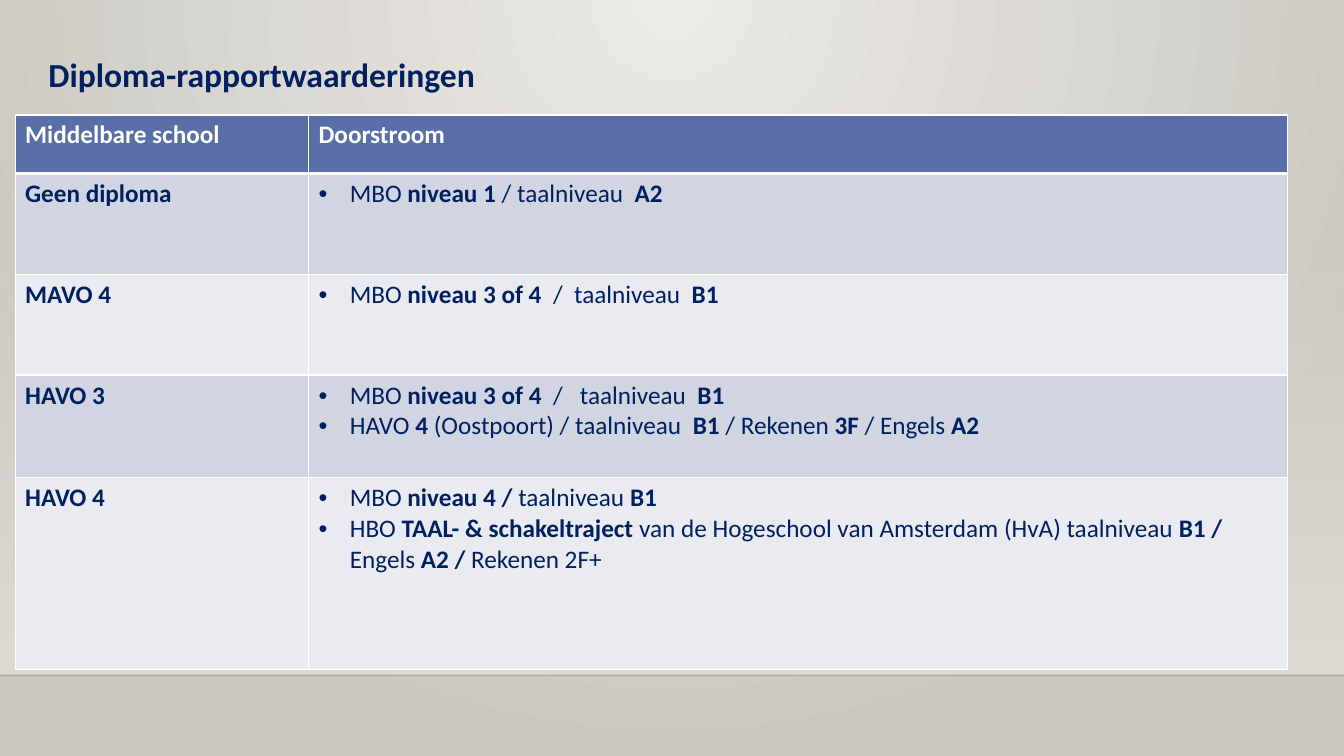
import pptx
import pptx.util
import pptx.dml.color
import pptx.enum.shapes
import pptx.enum.text
import pptx.oxml
import pptx.oxml.ns

THEME = {
    "font": "Calibri", "title_size": 24, "text_size": 18,
    "navy": "002060", "white": "FFFFFF", "line": "000001",
    "header": "586EA6", "bands": ("D1D5E1", "EAEBF1"),
    "glow": "ECEAE7", "edge": "CAC7C1", "wall": "DFDBD5",
}
NS = pptx.oxml.ns.nsdecls("a")
W, H = 13.33, 7.5
FLOOR = 6.7
COLS = (2.91, 9.71)
ROWS = (0.58, 1.0, 1.0, 1.02, 1.9)
INDENT = pptx.util.Inches(0.31)

# Text between ** marks is bold
CONTENT = [
    ("Middelbare school", ["**Doorstroom**"]),
    ("Geen diploma", ["MBO **niveau 1 **/ taalniveau  **A2**"]),
    ("MAVO 4", ["MBO **niveau 3 of 4**  /  taalniveau  **B1**"]),
    ("HAVO 3", ["MBO** niveau 3 of 4  **/   taalniveau  **B1**",
                "HAVO** 4 **(Oostpoort) / taalniveau  **B1** / Rekenen** 3F **/ Engels** A2**"]),
    ("HAVO 4", ["MBO** niveau 4 / **taalniveau** B1**",
                "HBO **TAAL- & schakeltraject **van de Hogeschool van Amsterdam (HvA) "
                "taalniveau **B1 / **Engels** A2 / **Rekenen 2F+"]),
]


def gradient(start, end, direction, start_alpha=100):
    return pptx.oxml.parse_xml(
        f'<a:gradFill {NS} rotWithShape="1"><a:gsLst><a:gs pos="0"><a:srgbClr val="{start}">'
        f'<a:alpha val="{start_alpha * 1000}"/></a:srgbClr></a:gs>'
        f'<a:gs pos="100000"><a:srgbClr val="{end}"/></a:gs></a:gsLst>{direction}</a:gradFill>')


def add_runs(p, text, size, color):
    for i, part in enumerate(text.split("**")):
        if part:
            r = p.add_run()
            r.text = part
            formats = {"name": THEME["font"], "size": pptx.util.Pt(size), "bold": i % 2 == 1}
            for name, value in formats.items():
                setattr(r.font, name, value)
            r.font.color.rgb = pptx.dml.color.RGBColor.from_string(color)


prs = pptx.Presentation()
prs.slide_width, prs.slide_height = pptx.util.Inches(W), pptx.util.Inches(H)
s = prs.slides.add_slide(prs.slide_layouts[5])

# Background glow from the top centre
s.background.fill.solid()
solid = s.background.fill._xPr.find(pptx.oxml.ns.qn("a:solidFill"))
solid.getparent().replace(solid, gradient(
    THEME["glow"], THEME["edge"],
    '<a:path path="circle"><a:fillToRect l="43000" t="0" r="43000" b="100000"/></a:path>'))

# Wall that fades in towards the floor line
title = s.shapes.title
wall = s.shapes.add_shape(
    pptx.enum.shapes.MSO_SHAPE.RECTANGLE, 0, pptx.util.Inches(2.21),
    prs.slide_width, pptx.util.Inches(FLOOR - 2.21))
wall.shadow.inherit = False
wall.line.fill.background()
wall.fill.solid()
solid = wall.element.spPr.find(pptx.oxml.ns.qn("a:solidFill"))
solid.getparent().replace(solid, gradient(
    THEME["wall"], THEME["wall"], '<a:lin ang="5400000" scaled="0"/>', 0))
title.element.addprevious(wall.element)

# Floor line
floor = s.shapes.add_connector(
    pptx.enum.shapes.MSO_CONNECTOR.STRAIGHT, 0, pptx.util.Inches(FLOOR),
    prs.slide_width, pptx.util.Inches(FLOOR))
floor.line.width = pptx.util.Pt(1)
floor.line.color.rgb = pptx.dml.color.RGBColor.from_string(THEME["line"])
color = floor.element.spPr.find(".//" + pptx.oxml.ns.qn("a:srgbClr"))
color.append(pptx.oxml.parse_xml(f'<a:alpha {NS} val="20000"/>'))
floor.element.spPr.append(pptx.oxml.parse_xml(f"<a:effectLst {NS}/>"))
title.element.addprevious(floor.element)

# Title
for name, value in {"left": 0.38, "top": 0.48, "width": 11.84, "height": 0.55}.items():
    setattr(title, name, pptx.util.Inches(value))
tf = title.text_frame
tf.word_wrap = True
tf.auto_size = pptx.enum.text.MSO_AUTO_SIZE.NONE
tf.vertical_anchor = pptx.enum.text.MSO_ANCHOR.TOP
p = tf.paragraphs[0]
p.alignment = pptx.enum.text.PP_ALIGN.LEFT
add_runs(p, "**Diploma-rapportwaarderingen**", THEME["title_size"], THEME["navy"])

# Table grid
frame = s.shapes.add_table(
    len(ROWS), len(COLS), pptx.util.Inches(0.15), pptx.util.Inches(1.14),
    pptx.util.Inches(sum(COLS)), pptx.util.Inches(sum(ROWS)))
table = frame.table
table.horz_banding = False
for column, width in zip(table.columns, COLS):
    column.width = pptx.util.Inches(width)

# Table cells
for i, (school, routes) in enumerate(CONTENT):
    table.rows[i].height = pptx.util.Inches(ROWS[i])
    fill = THEME["bands"][(i - 1) % 2] if i else THEME["header"]
    ink = THEME["navy"] if i else THEME["white"]
    for j, lines in enumerate(([f"**{school}**"], routes)):
        cell = table.cell(i, j)
        cell.fill.solid()
        cell.fill.fore_color.rgb = pptx.dml.color.RGBColor.from_string(fill)
        tf = cell.text_frame
        for n, line in enumerate(lines):
            p = tf.add_paragraph() if n else tf.paragraphs[0]
            if i and j:
                pPr = p._p.get_or_add_pPr()
                pPr.set("marL", str(INDENT))
                pPr.set("indent", str(-INDENT))
                for bullet in ('buFont {} typeface="Arial"', 'buChar {} char="•"'):
                    pPr.append(pptx.oxml.parse_xml(f"<a:{bullet.format(NS)}/>"))
            add_runs(p, line, THEME["text_size"], ink)
        # White borders, thicker under the header
        widths = {"lnL": 1, "lnR": 1, "lnT": 3 if i == 1 else 1, "lnB": 1 if i else 3}
        for k, (side, width) in enumerate(widths.items()):
            cell._tc.get_or_add_tcPr().insert(k, pptx.oxml.parse_xml(
                f'<a:{side} {NS} w="{pptx.util.Pt(width)}"><a:solidFill>'
                f'<a:srgbClr val="{THEME["white"]}"/></a:solidFill></a:{side}>'))

prs.save("out.pptx")
